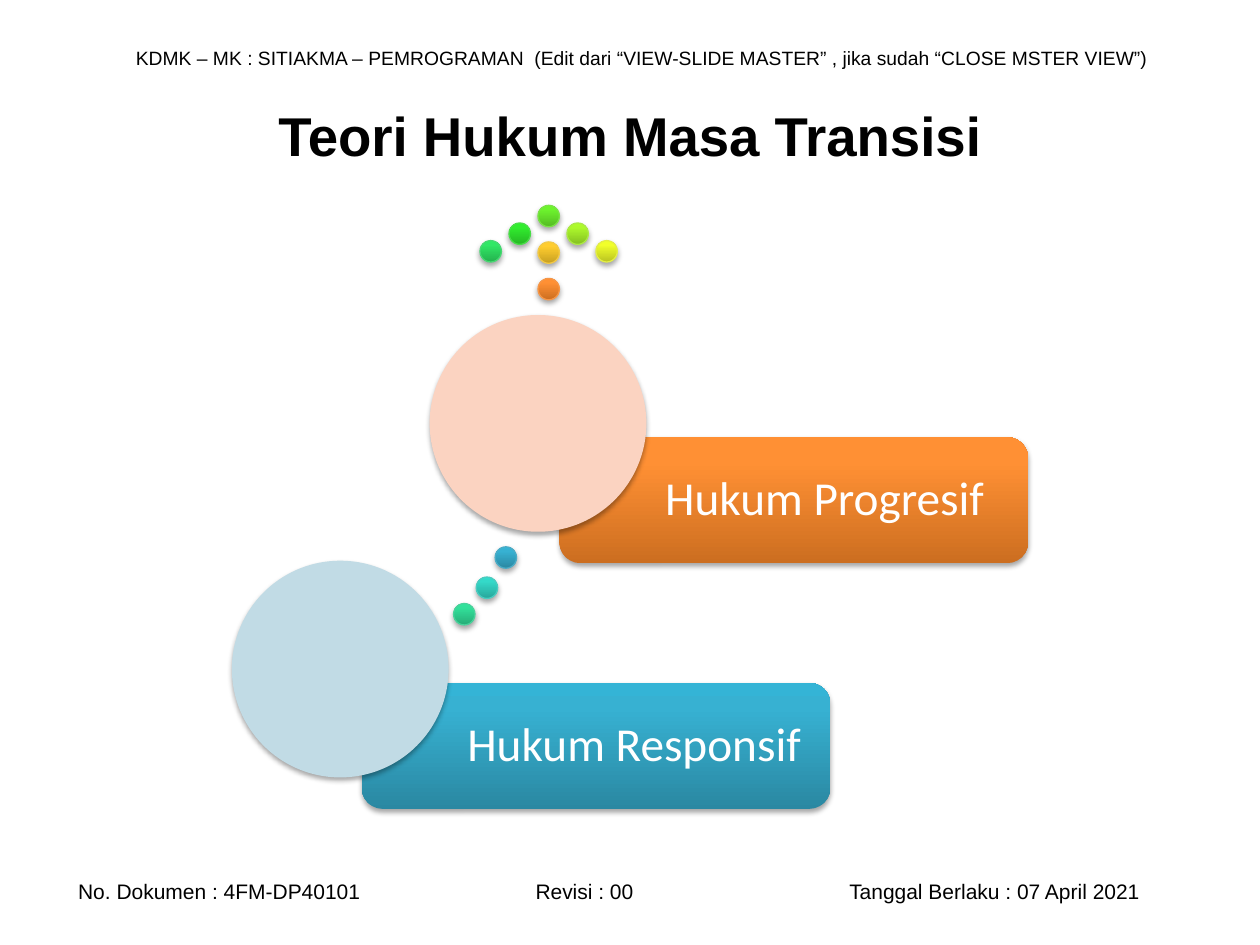
from lxml import etree
from pptx import Presentation
from pptx import util as u
from pptx.dml.color import RGBColor
from pptx.enum import shapes, text
from pptx.oxml import ns

Inches, Pt = u.Inches, u.Pt
COLOURS = {"black": "000000", "white": "FFFFFF", "pale blue": "C1DBE5", "pale orange": "FBD3C1"}
# Gradient from bottom to top (0, 80, 100 %), then the outline
SHADES = {
    "blue": ("2A88A2", "37B1D2", "34B4D6", "4BACC6"),
    "teal": ("28A79B", "34D9C9", "31DDCD", "4ACCC0"),
    "sea": ("27AC77", "32E09A", "2FE49B", "48D29B"),
    "emerald": ("25B24E", "30E765", "2DEB64", "47D872"),
    "green": ("26B724", "31ED2E", "2EF22B", "49DE47"),
    "lime": ("54BB23", "6DF32D", "6CF829", "79E346"),
    "olive": ("85C022", "ADF92C", "AFFE28", "ACE946"),
    "yellow": ("BAC421", "F1FF2B", "F1FF2C", "E3EE46"),
    "gold": ("C8A021", "FFCD2F", "FFCD31", "F2C946"),
    "orange": ("CC6E20", "FF9034", "FF9136", "F79646"),
}

deck = Presentation()
deck.slide_width, deck.slide_height = Inches(10), Inches(7.5)
page = deck.slides.add_slide(deck.slide_layouts[5])


def add_span(para, words, size, font, colour, bold=False):
    span = para.add_run()
    span.text = words
    span.font.size, span.font.name, span.font.bold = Pt(size), font, bold
    span.font.color.rgb = RGBColor.from_string(COLOURS[colour])


def add_shaded(kind, left, top, width, height, colour):
    """Add a shape with a soft shadow and a plain or three-stop fill."""
    shape = page.shapes.add_shape(kind, Inches(left), Inches(top), Inches(width), Inches(height))
    shape.line.fill.background()
    if colour in COLOURS:
        shape.fill.solid()
        shape.fill.fore_color.rgb = RGBColor.from_string(COLOURS[colour])
    else:
        shape.fill.gradient()
        shape.fill.gradient_angle = 90
        stops = shape._element.spPr.find(".//" + ns.qn("a:gsLst"))
        for stop in list(stops):
            stops.remove(stop)
        for place, shade in zip((0, 80, 100), SHADES[colour]):
            stop = etree.SubElement(stops, ns.qn("a:gs"), pos=str(place * 1000))
            etree.SubElement(stop, ns.qn("a:srgbClr"), val=shade)
    shape.shadow.inherit = False
    effects = shape._element.spPr.find(ns.qn("a:effectLst"))
    shadow = etree.SubElement(effects, ns.qn("a:outerShdw"), blurRad=str(Pt(3.1)),
                              dist=str(Pt(1.8)), dir="5400000", rotWithShape="0")
    black = etree.SubElement(shadow, ns.qn("a:srgbClr"), val=COLOURS["black"])
    etree.SubElement(black, ns.qn("a:alpha"), val="35000")
    return shape


# Header and footer lines; the footer columns stand on tab stops
for left, top, width, height, inset, size, tabs, words in (
    (0.98, 0.31, 8.35, 0.29, 0.1, 11, (),
     "KDMK – MK : SITIAKMA – PEMROGRAMAN  (Edit dari “VIEW-SLIDE MASTER” , jika sudah “CLOSE MSTER VIEW”)"),
    (0.2, 6.92, 9.45, 0.3, 0.42, 12, (3.63, 6.12),
     "No. Dokumen : 4FM-DP40101\tRevisi : 00\tTanggal Berlaku : 07 April 2021"),
):
    box = page.shapes.add_textbox(Inches(left), Inches(top), Inches(width), Inches(height))
    frame = box.text_frame
    frame.word_wrap = True
    frame.vertical_anchor = text.MSO_ANCHOR.MIDDLE
    frame.margin_left = Inches(inset)
    para = frame.paragraphs[0]
    if tabs:
        tab_list = etree.SubElement(para._p.get_or_add_pPr(), ns.qn("a:tabLst"))
        for tab in tabs:
            etree.SubElement(tab_list, ns.qn("a:tab"), pos=str(Inches(tab)), algn="l")
    add_span(para, words, size, "Arial", "black")

# Title
title = page.shapes.title
title.left, title.top, title.width, title.height = Inches(0.5), Inches(0.44), Inches(9), Inches(1.25)
title.text_frame.vertical_anchor = text.MSO_ANCHOR.MIDDLE
para = title.text_frame.paragraphs[0]
para.alignment = text.PP_ALIGN.CENTER
add_span(para, "Teori Hukum Masa Transisi", 31.2, "Arial", "black", bold=True)

# Dots: a trail between the circles, then an arrow pointing up
for left, top, colour in (
    (3.93, 4.34, "blue"), (3.78, 4.58, "teal"), (3.6, 4.79, "sea"),
    (3.81, 1.91, "emerald"), (4.04, 1.77, "green"), (4.27, 1.63, "lime"),
    (4.5, 1.77, "olive"), (4.73, 1.91, "yellow"), (4.27, 1.92, "gold"), (4.27, 2.21, "orange"),
):
    dot = add_shaded(shapes.MSO_SHAPE.OVAL, left, top, 0.17, 0.17, colour)
    dot.line.color.rgb = RGBColor.from_string(SHADES[colour][3])
    dot.line.width = Pt(0.75)

# Steps: a label bar with a circle over its left end
for left, top, colour, pale, words in (
    (2.87, 5.42, "blue", "pale blue", "Hukum Responsif"),
    (4.44, 3.47, "orange", "pale orange", "Hukum Progresif"),
):
    bar = add_shaded(shapes.MSO_SHAPE.ROUNDED_RECTANGLE, left, top, 3.72, 1, colour)
    frame = bar.text_frame
    frame.word_wrap = True
    frame.vertical_anchor = text.MSO_ANCHOR.MIDDLE
    frame.margin_left = Inches(0.79)
    frame.margin_top = frame.margin_right = frame.margin_bottom = Inches(0.11)
    para = frame.paragraphs[0]
    para.alignment = text.PP_ALIGN.LEFT
    para.line_spacing = 0.9
    add_span(para, words, 27, "Calibri", "white")
    add_shaded(shapes.MSO_SHAPE.OVAL, left - 1.03, top - 0.97, 1.72, 1.72, pale)

deck.save("out.pptx")
